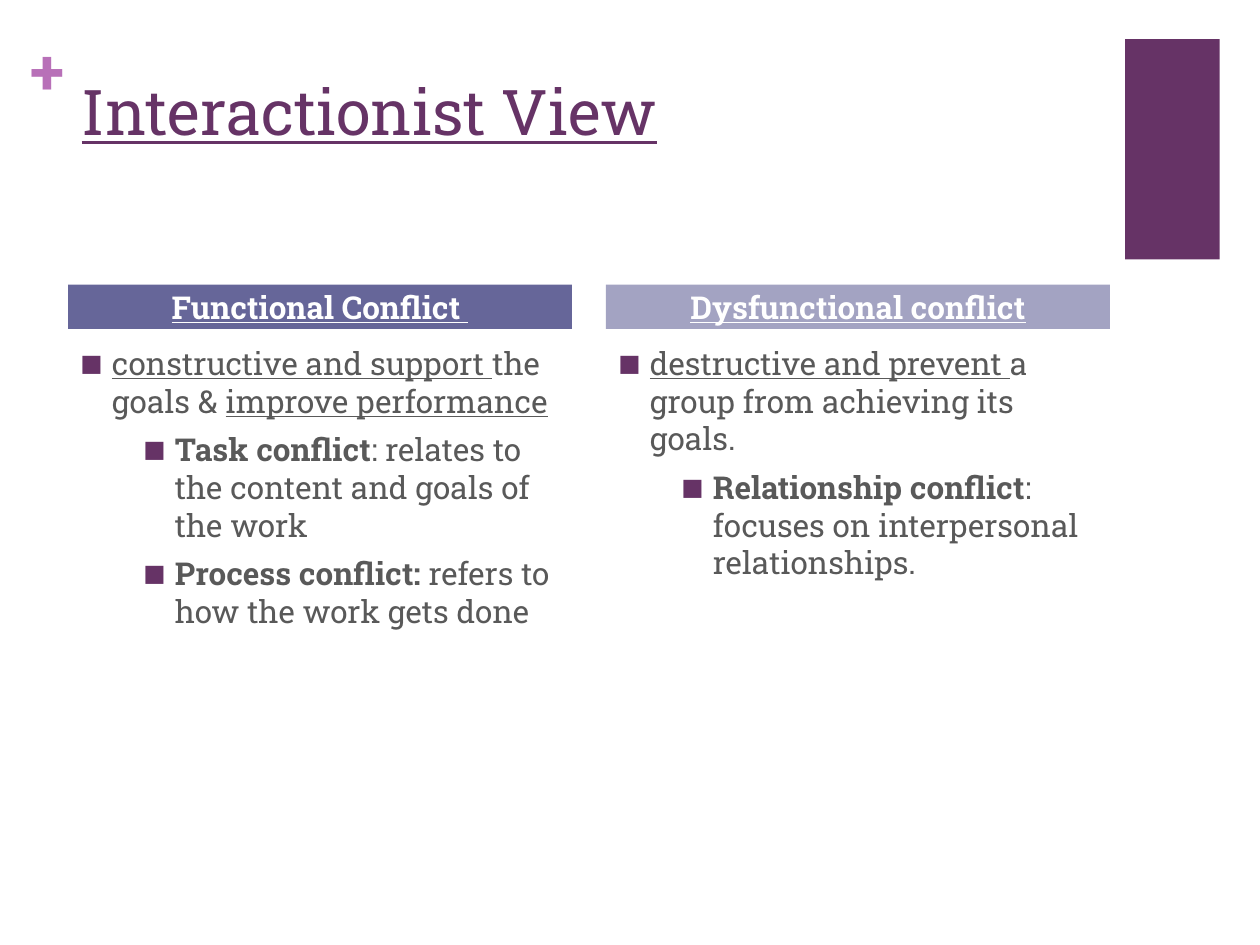
"""Build the Interactionist View slide, which compares two kinds of conflict."""
import pptx
import pptx.dml.color
import pptx.enum.shapes
import pptx.enum.text
import pptx.util
from lxml import etree

Inches = pptx.util.Inches
Pt = pptx.util.Pt
RGBColor = pptx.dml.color.RGBColor
Align = pptx.enum.text.PP_ALIGN
Anchor = pptx.enum.text.MSO_ANCHOR

PLUM = RGBColor(0x66, 0x33, 0x66)
ORCHID = RGBColor(0xB8, 0x70, 0xB8)
INDIGO = RGBColor(0x66, 0x66, 0x99)
LAVENDER = RGBColor(0xA3, 0xA3, 0xC2)
GRAY = RGBColor(0x59, 0x59, 0x59)
WHITE = RGBColor(0xFF, 0xFF, 0xFF)

FONT = "Roboto Slab"
COLUMN_LEFT, COLUMN_STEP, COLUMN_WIDTH = 0.54, 4.27, 4
HEADER_TOP, HEADER_HEIGHT = 2.26, 0.35
BODY_TOP, BODY_HEIGHT = 2.68, 4.02
LEVEL_INDENTS = (0.25, 0.75)
LEVEL_SPACING = (20, 6)

COLUMNS = [
    ("Functional Conflict ", INDIGO, [
        (0, [("constructive and support ", "u"), ("the goals & ", ""),
             ("improve performance", "u")]),
        (1, [("Task conflict", "b"),
             (": relates to the content and goals of the work", "")]),
        (1, [("Process conflict: ", "b"),
             ("refers to how the work gets done", "")]),
    ]),
    ("Dysfunctional conflict", LAVENDER, [
        (0, [("destructive and prevent ", "u"),
             ("a group from achieving its goals.", "")]),
        (1, [("Relationship conflict", "b"),
             (": focuses on interpersonal relationships.", "")]),
    ]),
]


def add_text(paragraph, text, size=18, color=GRAY, bold=False, underline=False):
    """Append a formatted run to a paragraph."""
    run = paragraph.add_run()
    run.text = text
    run.font.name = FONT
    run.font.size = Pt(size)
    run.font.color.rgb = color
    run.font.bold = bold
    run.font.underline = underline


def set_margins(frame, horizontal, vertical):
    """Set the inner margins of a text frame in inches."""
    frame.margin_left = frame.margin_right = Inches(horizontal)
    frame.margin_top = frame.margin_bottom = Inches(vertical)


def add_box(slide, left, top, width, height, wrap=True):
    """Add a text box and return its text frame."""
    box = slide.shapes.add_textbox(
        Inches(left), Inches(top), Inches(width), Inches(height))
    box.text_frame.word_wrap = wrap
    return box.text_frame


def add_block(slide, left, top, width, height, color):
    """Add a plain filled rectangle."""
    shape = slide.shapes.add_shape(
        pptx.enum.shapes.MSO_SHAPE.RECTANGLE,
        Inches(left), Inches(top), Inches(width), Inches(height))
    shape.shadow.inherit = False
    shape.fill.solid()
    shape.fill.fore_color.rgb = color
    shape.line.fill.background()
    return shape


def set_bullet(paragraph, level):
    """Give a paragraph the square bullet, indent and spacing of its level."""
    paragraph.level = level
    paragraph.space_before = Pt(LEVEL_SPACING[level])
    properties = paragraph._p.get_or_add_pPr()
    properties.set("marL", str(Inches(LEVEL_INDENTS[level])))
    properties.set("indent", str(-Inches(0.25)))
    namespace = pptx.oxml.ns.qn
    color = etree.SubElement(properties, namespace("a:buClr"))
    etree.SubElement(color, namespace("a:srgbClr"), val=str(PLUM))
    etree.SubElement(properties, namespace("a:buSzPct"), val="75000")
    etree.SubElement(properties, namespace("a:buFont"), typeface=FONT)
    etree.SubElement(properties, namespace("a:buChar"), char="■")


def add_header(slide, left, text, color):
    """Add the coloured heading bar of a column."""
    bar = add_block(slide, left, HEADER_TOP, COLUMN_WIDTH, HEADER_HEIGHT, color)
    frame = bar.text_frame
    set_margins(frame, 0.1, 0)
    frame.word_wrap = True
    frame.vertical_anchor = Anchor.MIDDLE
    paragraph = frame.paragraphs[0]
    paragraph.alignment = Align.CENTER
    add_text(paragraph, text, color=WHITE, bold=True, underline=True)


def add_bullets(slide, left, items):
    """Add the bulleted text of a column."""
    frame = add_box(slide, left, BODY_TOP, COLUMN_WIDTH, BODY_HEIGHT)
    for index, (level, runs) in enumerate(items):
        paragraph = frame.add_paragraph() if index else frame.paragraphs[0]
        set_bullet(paragraph, level)
        for text, style in runs:
            add_text(paragraph, text, bold=style == "b", underline=style == "u")


def main():
    """Build and save the presentation."""
    presentation = pptx.Presentation()
    presentation.slide_width = Inches(10)
    presentation.slide_height = Inches(7.5)
    slide = presentation.slides.add_slide(presentation.slide_layouts[6])

    add_block(slide, 8.93, 0.31, 0.75, 1.75, PLUM)
    plus = add_box(slide, 0.24, 0.25, 0.29, 0.61, wrap=False)
    set_margins(plus, 0, 0)
    add_text(plus.paragraphs[0], "+", size=36, color=ORCHID, bold=True)
    title = add_box(slide, 0.55, 0.53, 8.26, 1.22)
    add_text(title.paragraphs[0], "Interactionist View",
             size=36, color=PLUM, underline=True)

    for index, (heading, color, items) in enumerate(COLUMNS):
        left = COLUMN_LEFT + index * COLUMN_STEP
        add_header(slide, left, heading, color)
        add_bullets(slide, left, items)

    presentation.save("out.pptx")


if __name__ == "__main__":
    main()
